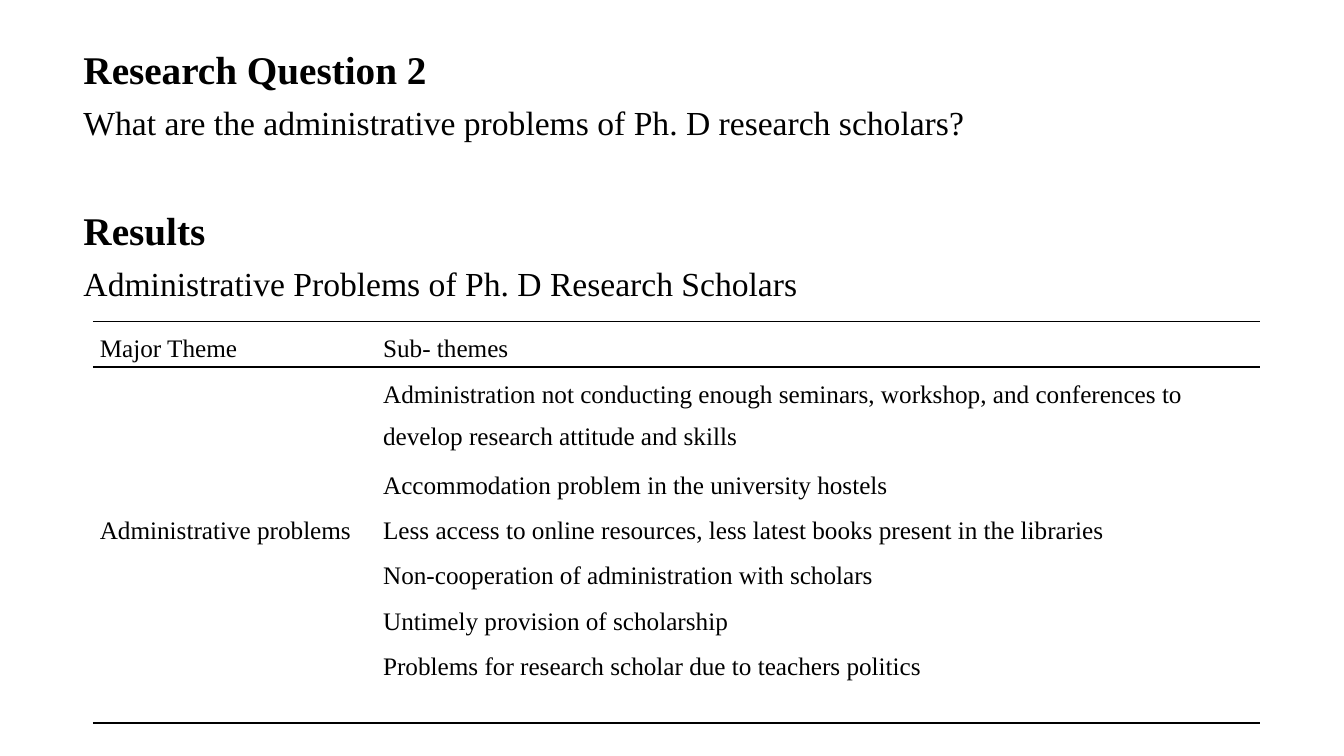
from lxml.etree import SubElement
from pptx import Presentation
from pptx.dml.color import RGBColor
from pptx.oxml.ns import qn
from pptx.util import Inches, Pt


def color(hex_text):
    return RGBColor.from_string(hex_text)


class SlideBuilder:
    font = "Times New Roman"
    ink = "000000"
    rule_width = Pt(1)

    def __init__(self, deck):
        self.page = deck.slides.add_slide(deck.slide_layouts[6])

    def add_span(self, para, text, size, bold=False):
        span = para.add_run()
        span.text = text
        span.font.name = self.font
        span.font.size = Pt(size)
        span.font.bold = bold
        span.font.color.rgb = color(self.ink)

    def text(self, left, top, width, height, lines):
        box = self.page.shapes.add_textbox(
            Inches(left), Inches(top), Inches(width), Inches(height))
        frame = box.text_frame
        frame.word_wrap = True
        for index, (text, size, bold, space_before) in enumerate(lines):
            para = frame.add_paragraph() if index else frame.paragraphs[0]
            para.line_spacing = 0.9
            para.space_before = Pt(space_before)
            self.add_span(para, text, size, bold)

    def border(self, cell, ruled_sides):
        properties = cell._tc.get_or_add_tcPr()
        for side in "LRTB":
            line = SubElement(properties, qn(f"a:ln{side}"))
            if side in ruled_sides:
                line.set("w", str(self.rule_width))
                fill = SubElement(line, qn("a:solidFill"))
                SubElement(fill, qn("a:srgbClr")).set("val", self.ink)
            else:
                SubElement(line, qn("a:noFill"))

    def table(self, left, top, widths, heights, rows, size, ruled_rows):
        frame = self.page.shapes.add_table(
            len(rows), len(widths), Inches(left), Inches(top),
            Inches(sum(widths)), Inches(sum(heights)))
        table = frame.table
        table.first_row = table.horz_banding = False
        for column, width in zip(table.columns, widths):
            column.width = Inches(width)
        for row, height in zip(table.rows, heights):
            row.height = Inches(height)
        for row_index, texts in enumerate(rows):
            for column_index, text in enumerate(texts):
                cell = table.cell(row_index, column_index)
                cell.margin_left = cell.margin_right = Inches(0.07)
                cell.margin_top = cell.margin_bottom = 0
                self.border(cell, ruled_rows.get(row_index, ""))
                cell.fill.background()
                if text:
                    para = cell.text_frame.paragraphs[0]
                    para.line_spacing = 1.5
                    self.add_span(para, text, size)


def main():
    deck = Presentation()
    deck.slide_width = Inches(13.33)
    deck.slide_height = Inches(7.5)
    builder = SlideBuilder(deck)

    # Question and results headings: text, size, bold, space before
    builder.text(0.73, 0.45, 11.5, 2.7, [
        ("Research Question 2", 28, True, 10),
        ("What are the administrative problems of Ph. D research scholars?",
         24, False, 10),
        ("Results", 28, True, 49),
        ("Administrative Problems of Ph. D Research Scholars", 24, False, 10),
    ])

    # Themes table, with rules around the header and at the foot
    rows = [
        ("Major Theme", "Sub- themes"),
        ("", "Administration not conducting enough seminars, workshop, and "
             "conferences to develop research attitude and skills"),
        ("", "Accommodation problem in the university hostels"),
        ("Administrative problems",
         "Less access to online resources, less latest books present in the "
         "libraries"),
        ("", "Non-cooperation of administration with scholars"),
        ("", "Untimely provision of scholarship"),
        ("", "Problems for research scholar due to teachers politics"),
    ]
    line = 0.415
    heights = [line, 2 * line, line, line, line, line, 2 * line]
    builder.table(0.92, 3.19, [2.81, 8.77], heights, rows, 18,
                  {0: "TB", 1: "T", len(rows) - 1: "B"})

    deck.save("out.pptx")


if __name__ == "__main__":
    main()
